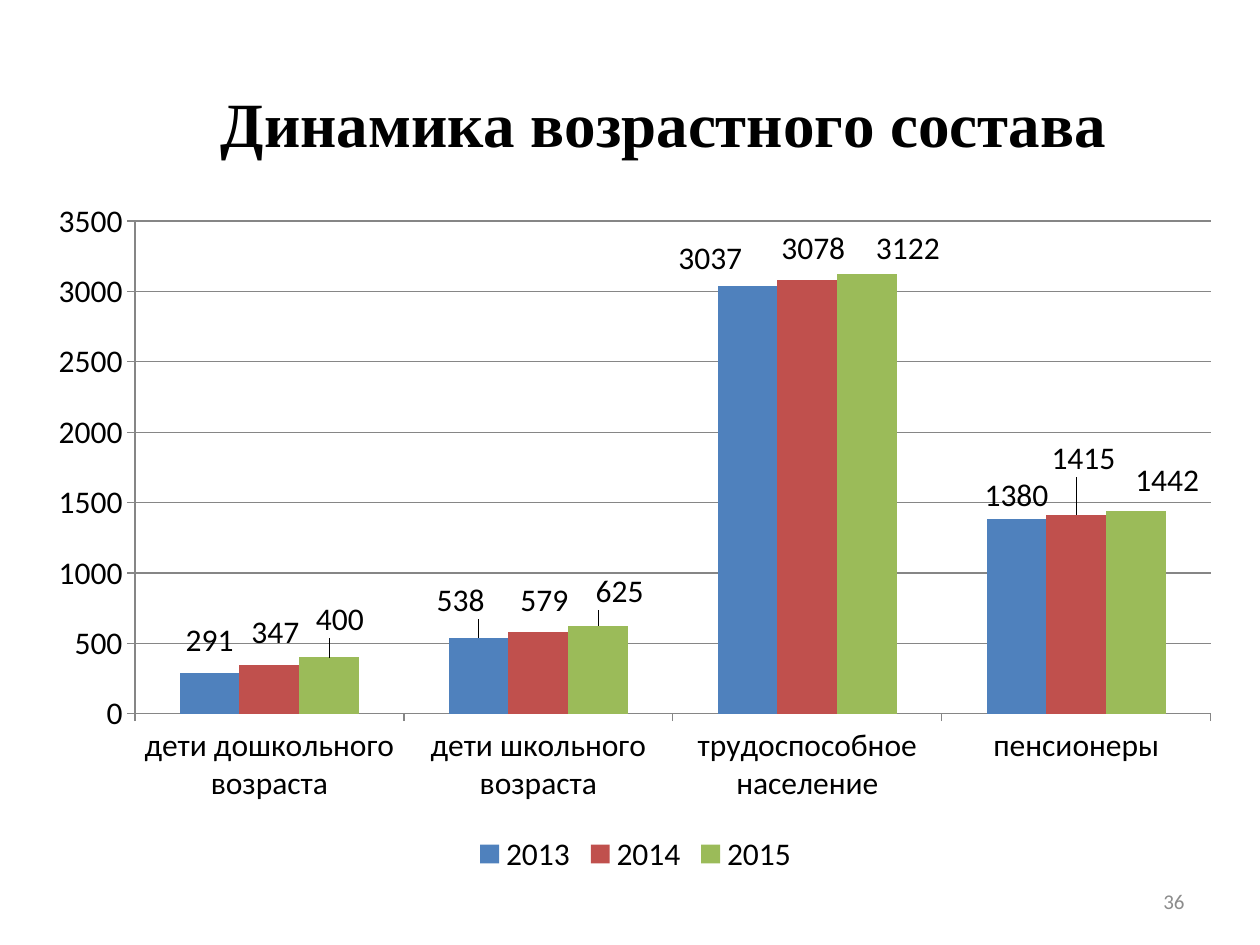
from lxml import etree
from pptx import Presentation
from pptx.chart.data import CategoryChartData
from pptx.dml.color import RGBColor
from pptx.enum.chart import XL_CHART_TYPE, XL_LABEL_POSITION, XL_LEGEND_POSITION, XL_TICK_MARK
from pptx.enum.text import MSO_ANCHOR, PP_ALIGN
from pptx.oxml.ns import qn
from pptx.util import Inches, Pt

COLUMN = XL_CHART_TYPE.COLUMN_CLUSTERED
ABOVE = XL_LABEL_POSITION.OUTSIDE_END
BOTTOM = XL_LEGEND_POSITION.BOTTOM
OUT = XL_TICK_MARK.OUTSIDE
MIDDLE = MSO_ANCHOR.MIDDLE
RIGHT = PP_ALIGN.RIGHT

COLORS = {
    "2013": "4F81BD", "2014": "C0504D", "2015": "9BBB59",
    "text": "000000", "line": "868686", "page": "8C8C8C",
}
GROUPS = ["дети дошкольного возраста", "дети школьного возраста",
          "трудоспособное население", "пенсионеры"]
COUNTS = {
    "2013": [291, 538, 3037, 1380],
    "2014": [347, 579, 3078, 1415],
    "2015": [400, 625, 3122, 1442],
}
SHIFTS = {
    "2013": [(0, -1), (-1.5, -1.7), (-3.1, -0.5)],
    "2014": [(0.5, -1.1), (0.5, -1), (0.5, -1), (0.6, -3.9)],
    "2015": [(0.9, -1.7), (1.8, -1.3), (3.4, -0.2), (2.6, -0.8)],
}
BODY = {"name": "Calibri", "size": Pt(18), "bold": False}
HEAD = {"name": "Times New Roman", "size": Pt(36), "bold": True}
PAGE = {"name": "Calibri", "size": Pt(12)}


def style(font, values, color):
    """Apply format values and a named colour to a font."""
    for key, value in values.items():
        setattr(font, key, value)
    font.color.rgb = RGBColor.from_string(COLORS[color])


def place(node, index, values):
    """Give a chart part a manual layout; positions are in percent."""
    for old in node.findall(qn("c:layout")):
        node.remove(old)
    layout = etree.Element(qn("c:layout"))
    manual = etree.SubElement(layout, qn("c:manualLayout"))
    for key, value in values.items():
        if not isinstance(value, str):
            value = str(value / 100)
        etree.SubElement(manual, qn("c:" + key)).set("val", value)
    node.insert(index, layout)


def add_title(chart, text):
    """Write the chart title over the plot."""
    title = chart.chart_title
    para = title.text_frame.paragraphs[0]
    run = para.add_run()
    run.text = text
    style(run.font, HEAD, "text")
    node = title._element
    node.find(qn("c:overlay")).set("val", "1")
    place(node, 1, {"xMode": "edge", "yMode": "edge", "x": 14.5, "y": 2})


def add_labels(series):
    """Colour a series and shift its value labels."""
    series.format.fill.solid()
    series.format.fill.fore_color.rgb = RGBColor.from_string(COLORS[series.name])
    labels = series.data_labels
    labels.show_value = True
    labels.position = ABOVE
    shifts = SHIFTS[series.name]
    for index in range(len(shifts)):
        series.points[index].data_label.position = ABOVE
    nodes = series._element.xpath("c:dLbls/c:dLbl")
    for node, (left, top) in zip(nodes, shifts):
        place(node, 1, {"x": left, "y": top})


def set_axes(chart):
    """Format both axes and the gridlines."""
    scale = chart.value_axis
    for key, value in {"minimum_scale": 0, "maximum_scale": 3500,
                       "major_unit": 500, "has_major_gridlines": True}.items():
        setattr(scale, key, value)
    for axis in (scale, chart.category_axis):
        axis.major_tick_mark = OUT
        axis.format.line.color.rgb = RGBColor.from_string(COLORS["line"])
    grid = scale.major_gridlines.format.line
    grid.color.rgb = RGBColor.from_string(COLORS["line"])


def add_chart(slide):
    """Draw the column chart of age groups by year."""
    data = CategoryChartData()
    data.categories = GROUPS
    for year, counts in COUNTS.items():
        data.add_series(year, counts)
    frame = slide.shapes.add_chart(
        COLUMN, Inches(0.28), Inches(0.44), Inches(9.53), Inches(6.54), data)
    chart = frame.chart
    style(chart.font, BODY, "text")
    add_title(chart, "Динамика возрастного состава")
    chart.has_legend = True
    chart.legend.position = BOTTOM
    chart.legend.include_in_layout = False
    set_axes(chart)
    plot = chart.plots[0]
    for key, value in {"gap_width": 150, "overlap": 0,
                       "vary_by_categories": False}.items():
        setattr(plot, key, value)
    for series in plot.series:
        add_labels(series)
    area = chart._chartSpace.xpath("c:chart/c:plotArea")[0]
    place(area, 0, {"layoutTarget": "inner", "xMode": "edge", "yMode": "edge",
                    "x": 8.3, "y": 20.1, "w": 89.6, "h": 59.8})


def add_page(slide, text):
    """Write the page number at the lower right."""
    box = slide.shapes.add_textbox(
        Inches(7.17), Inches(6.95), Inches(2.33), Inches(0.4))
    frame = box.text_frame
    frame.word_wrap = True
    frame.vertical_anchor = MIDDLE
    para = frame.paragraphs[0]
    para.alignment = RIGHT
    run = para.add_run()
    run.text = text
    style(run.font, PAGE, "page")


def main():
    """Build and save the slide."""
    deck = Presentation()
    deck.slide_width, deck.slide_height = Inches(10), Inches(7.5)
    slide = deck.slides.add_slide(deck.slide_layouts[6])
    add_chart(slide)
    add_page(slide, "36")
    deck.save("out.pptx")


if __name__ == "__main__":
    main()
